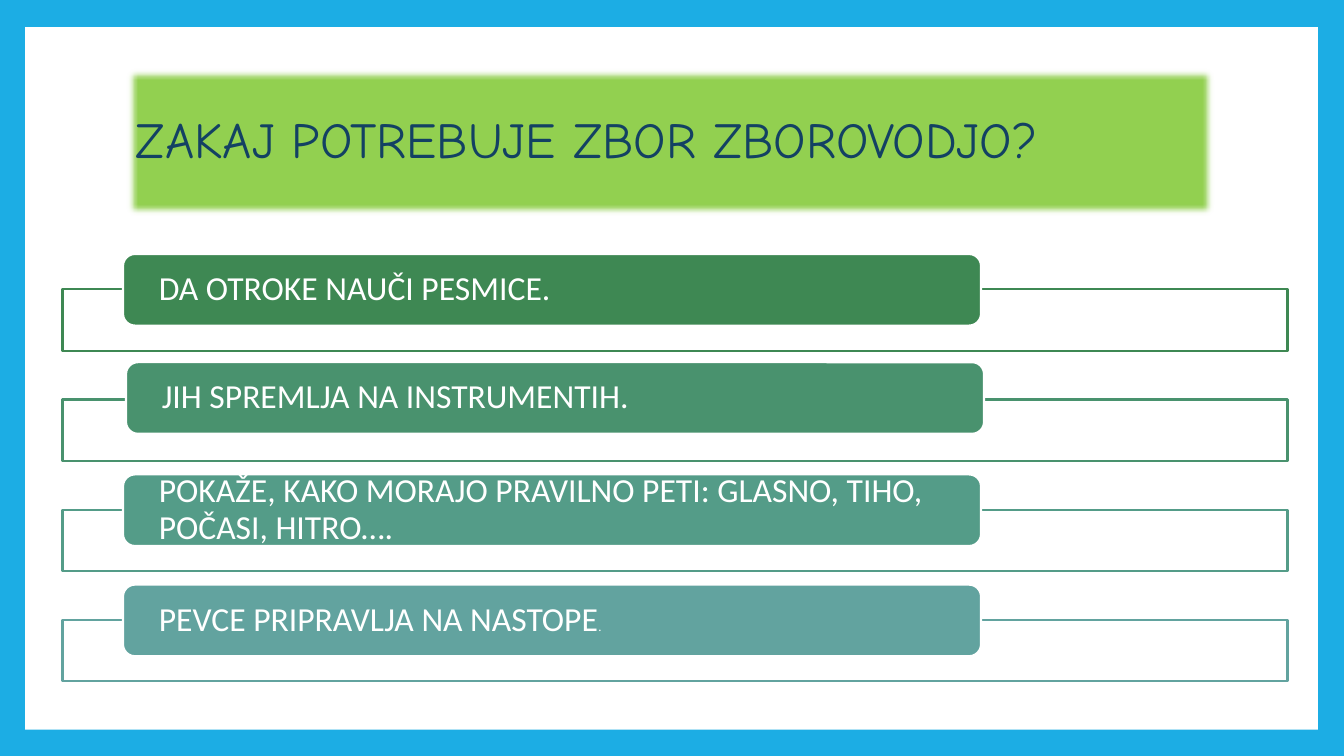
from pptx import Presentation
from pptx.dml.color import RGBColor
from pptx.enum.shapes import MSO_SHAPE
from pptx.enum.text import MSO_ANCHOR, PP_ALIGN
from pptx.oxml.ns import qn
from pptx.util import Inches, Pt
from lxml import etree

RECT, ROUNDED = MSO_SHAPE.RECTANGLE, MSO_SHAPE.ROUNDED_RECTANGLE
MIDDLE, LEFT = MSO_ANCHOR.MIDDLE, PP_ALIGN.LEFT

# Content
TITLE = "ZAKAJ POTREBUJE ZBOR ZBOROVODJO?"
# Each reason: text runs as (text, size key), colour, label offset (x, y)
REASONS = [
    ([("DA OTROKE NAUČI PESMICE.", "reason")], "3E8853", (0, 0)),
    ([("JIH SPREMLJA NA INSTRUMENTIH.", "reason")], "49926E", (0.03, -0.02)),
    ([("POKAŽE, KAKO MORAJO PRAVILNO PETI: GLASNO, TIHO, POČASI, HITRO….",
       "reason")], "549C88", (0, 0)),
    ([("PEVCE PRIPRAVLJA NA NASTOPE", "reason"), (".", "small")], "62A39F", (0, 0)),
]

THEME = {
    "border": "1CADE4", "paper": "FFFFFF", "banner": "92D050", "title_ink": "134163",
    "title_font": "Comic Neue", "body_font": "Calibri",
    "title": 36, "reason": 24, "small": 9, "line": 1.5,
}

# Layout, in inches
PAPER = (0.25, 0.27, 12.82, 6.97)
BANNER = (1.25, 0.67, 10.8, 1.48)
FRAME_LEFT, FRAME_WIDTH, FRAME_HEIGHT = 0.62, 12.15, 0.61
FIRST_FRAME, LAST_FRAME = 2.87, 6.15
FRAME_STEP = (LAST_FRAME - FIRST_FRAME) / (len(REASONS) - 1)
LABEL_LEFT, LABEL_WIDTH, LABEL_HEIGHT = 1.22, 8.51, 0.71
LABEL_RISE = 0.35


def rgb(value):
    return RGBColor.from_string(value)


def add_block(slide, preset, box, fill, line=None):
    block = slide.shapes.add_shape(preset, *map(Inches, box))
    block.shadow.inherit = False
    block.fill.solid()
    block.fill.fore_color.rgb = rgb(fill)
    if line:
        block.line.color.rgb = rgb(line)
        block.line.width = Pt(THEME["line"])
    else:
        block.line.fill.background()
    return block


def write(block, runs, *, font, color, side=0.1, top=0.05):
    frame = block.text_frame
    frame.word_wrap = True
    frame.vertical_anchor = MIDDLE
    frame.margin_left = frame.margin_right = Inches(side)
    frame.margin_top = frame.margin_bottom = Inches(top)
    paragraph = frame.paragraphs[0]
    paragraph.alignment = LEFT
    paragraph.line_spacing = 0.9
    for text, size in runs:
        run = paragraph.add_run()
        run.text = text
        run.font.name = font
        run.font.size = Pt(THEME[size])
        run.font.color.rgb = rgb(color)


def soften_edges(block, radius):
    effects = block._element.spPr.find(qn("a:effectLst"))
    etree.SubElement(effects, qn("a:softEdge"), rad=str(int(radius)))


def set_opacity(block, percent):
    color = block._element.spPr.find(qn("a:solidFill"))[0]
    etree.SubElement(color, qn("a:alpha"), val=str(percent * 1000))


def main():
    prs = Presentation()
    prs.slide_width, prs.slide_height = Inches(13.33), Inches(7.5)
    slide = prs.slides.add_slide(prs.slide_layouts[6])

    # Blue border around white paper
    slide.background.fill.solid()
    slide.background.fill.fore_color.rgb = rgb(THEME["border"])
    add_block(slide, RECT, PAPER, THEME["paper"])

    # Title banner
    banner = add_block(slide, RECT, BANNER, THEME["banner"])
    soften_edges(banner, Pt(5))
    write(banner, [(TITLE, "title")], font=THEME["title_font"], color=THEME["title_ink"])

    # Reasons: an outlined frame with a label over its top edge
    for index, (runs, color, (dx, dy)) in enumerate(REASONS):
        top = FIRST_FRAME + index * FRAME_STEP
        outline = add_block(slide, RECT, (FRAME_LEFT, top, FRAME_WIDTH, FRAME_HEIGHT),
                            THEME["paper"], color)
        set_opacity(outline, 90)
        label = add_block(slide, ROUNDED,
                          (LABEL_LEFT + dx, top - LABEL_RISE + dy, LABEL_WIDTH, LABEL_HEIGHT),
                          color, THEME["paper"])
        write(label, runs, font=THEME["body_font"], color=THEME["paper"], side=0.32, top=0)

    prs.save("out.pptx")


if __name__ == "__main__":
    main()
